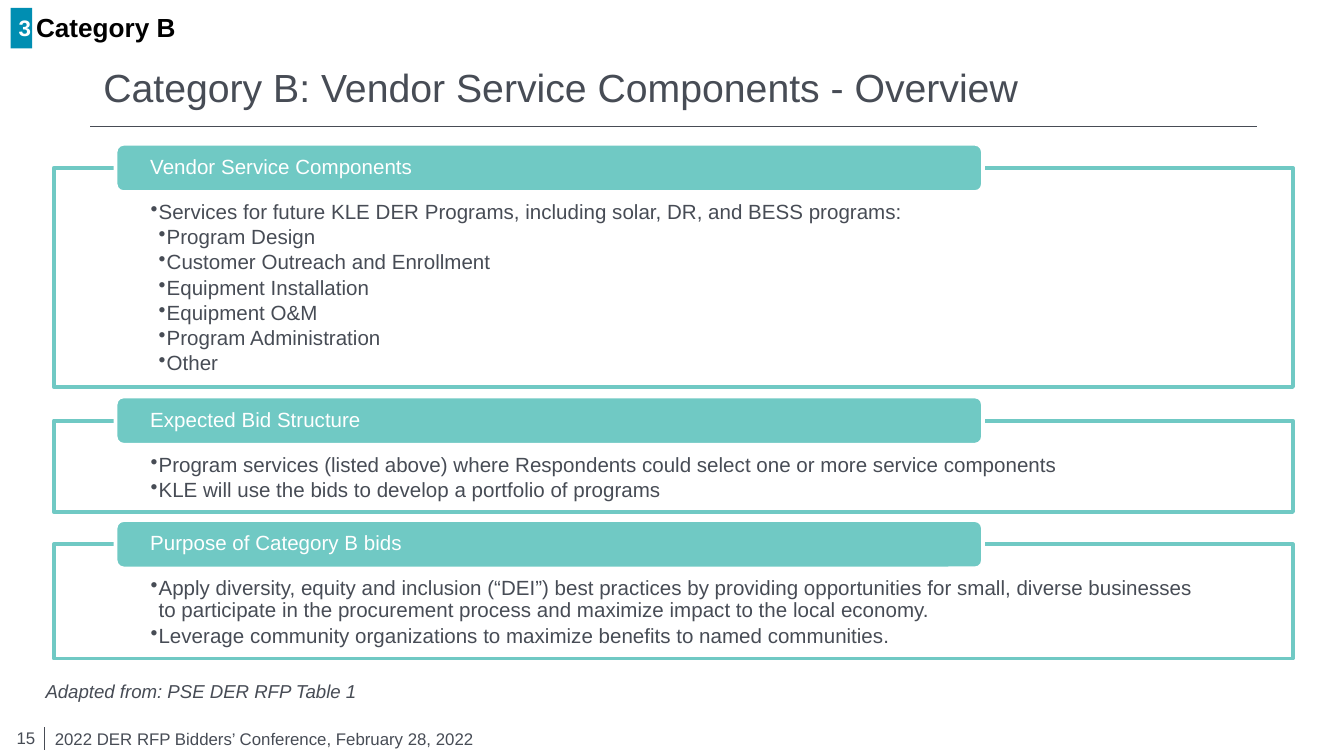
from lxml import etree
from pptx import Presentation
from pptx.dml.color import RGBColor
from pptx.enum.shapes import MSO_CONNECTOR, MSO_SHAPE
from pptx.enum.text import MSO_ANCHOR, PP_ALIGN
from pptx.oxml.ns import qn
from pptx.util import Inches, Pt

LINE = MSO_CONNECTOR.STRAIGHT
RECT = MSO_SHAPE.RECTANGLE
ROUND = MSO_SHAPE.ROUNDED_RECTANGLE
TOP, MIDDLE = MSO_ANCHOR.TOP, MSO_ANCHOR.MIDDLE
LEFT, CENTER, RIGHT = PP_ALIGN.LEFT, PP_ALIGN.CENTER, PP_ALIGN.RIGHT

GREY = RGBColor(0x47, 0x4C, 0x55)
TEAL = RGBColor(0x70, 0xC9, 0xC4)
BLUE = RGBColor(0x00, 0x8E, 0xB2)
WHITE = RGBColor(0xFF, 0xFF, 0xFF)
BLACK = RGBColor(0x00, 0x00, 0x00)

INDENT = 0.06
PANELS = [
    (1.25, 1.63, "Vendor Service Components", [
        (1, "Services for future KLE DER Programs, including solar, DR, and BESS programs:"),
        (2, "Program Design"),
        (2, "Customer Outreach and Enrollment"),
        (2, "Equipment Installation"),
        (2, "Equipment O&M"),
        (2, "Program Administration"),
        (2, "Other"),
    ]),
    (3.13, 0.68, "Expected Bid Structure", [
        (1, "Program services (listed above) where Respondents could select one or more service components"),
        (1, "KLE will use the bids to develop a portfolio of programs"),
    ]),
    (4.05, 0.85, "Purpose of Category B bids", [
        (1, "Apply diversity, equity and inclusion (“DEI”) best practices by providing opportunities "
            "for small, diverse businesses to participate in the procurement process and maximize "
            "impact to the local economy."),
        (1, "Leverage community organizations to maximize benefits to named communities."),
    ]),
]


def style(para, size, color, align=LEFT, bold=False, italic=False):
    para.alignment = align
    for font in [para.font] + [run.font for run in para.runs]:
        font.name = "Arial"
        font.size = Pt(size)
        font.color.rgb = color
        font.bold = bold
        font.italic = italic


def set_frame(shape, anchor, left=0.1, top=0.05, right=0.1, bottom=0.05):
    frame = shape.text_frame
    frame.word_wrap = True
    frame.vertical_anchor = anchor
    frame.margin_left, frame.margin_top = Inches(left), Inches(top)
    frame.margin_right, frame.margin_bottom = Inches(right), Inches(bottom)
    return frame


def add_label(slide, box, text, size, color, anchor=MIDDLE, **look):
    shape = slide.shapes.add_textbox(*map(Inches, box))
    frame = set_frame(shape, anchor)
    frame.text = text
    style(frame.paragraphs[0], size, color, **look)


def add_block(slide, kind, box, fill, edge=None):
    shape = slide.shapes.add_shape(kind, *map(Inches, box))
    shape.shadow.inherit = False
    shape.fill.solid()
    shape.fill.fore_color.rgb = fill
    if edge is None:
        shape.line.fill.background()
    else:
        shape.line.color.rgb = edge
        shape.line.width = Pt(2)
    return shape


def add_rule(slide, *ends):
    rule = slide.shapes.add_connector(LINE, *map(Inches, ends))
    rule.line.color.rgb = GREY
    rule.line.width = Pt(0.75)
    etree.SubElement(rule._element.spPr, qn("a:effectLst"))


def add_bullet(para, level):
    props = para._p.get_or_add_pPr()
    props.set("marL", str(Inches(INDENT * level)))
    props.set("indent", str(-Inches(INDENT)))
    etree.SubElement(props, qn("a:buChar"), char="•")
    para.level = level
    para.line_spacing = 0.9
    para.space_after = Pt(1.65)


def add_panel(slide, left, top, width, height, head, items):
    body = add_block(slide, RECT, (left, top, width, height), WHITE, TEAL)
    alpha = etree.SubElement(body._element.spPr.find(".//" + qn("a:srgbClr")), qn("a:alpha"))
    alpha.set("val", "90000")
    frame = set_frame(body, TOP, 0.72, 0.25, 0.72, 0.09)
    for row, (level, text) in enumerate(items):
        para = frame.add_paragraph() if row else frame.paragraphs[0]
        para.text = text
        add_bullet(para, level)
        style(para, 11, GREY)

    tab = add_block(slide, ROUND, (left + 0.46, top - 0.18, width * 0.7, 0.36), TEAL, WHITE)
    frame = set_frame(tab, MIDDLE, 0.24, 0, 0.24, 0)
    frame.text = head
    frame.paragraphs[0].line_spacing = 0.9
    style(frame.paragraphs[0], 11, WHITE)


def add_marker(slide, left, top):
    badge = add_block(slide, RECT, (left, top, 0.16, 0.3), BLUE)
    frame = set_frame(badge, TOP, left=0.05, right=0)
    frame.word_wrap = False
    frame.text = "3"
    style(frame.paragraphs[0], 12, WHITE, CENTER, bold=True)
    add_label(slide, (left + 0.09, top + 0.02, 2.67, 0.24), "Category B", 14, BLACK, bold=True)


def add_title(slide, left, top, width, height):
    add_label(slide, (left, top, width, height),
              "Category B: Vendor Service Components - Overview", 21, GREY)
    add_rule(slide, left, top + height, left + width, top + height)


def add_footer(slide, left, top):
    add_label(slide, (left, top, 0.42, 0.34), "15", 9, GREY, align=RIGHT)
    add_rule(slide, left + 0.39, top + 0.09, left + 0.39, top + 0.26)
    add_label(slide, (left + 0.37, top + 0.05, 4.84, 0.25),
              "2022 DER RFP Bidders’ Conference, February 28, 2022", 9, GREY, TOP)


def main():
    deck = Presentation()
    deck.slide_width = Inches(10)
    deck.slide_height = deck.slide_width * 9 // 16
    slide = deck.slides.add_slide(deck.slide_layouts[6])
    add_footer(slide, -0.06, 5.32)
    add_title(slide, 0.67, 0.35, 8.68, 0.59)
    add_marker(slide, 0.08, 0.06)
    for top, height, head, items in PANELS:
        add_panel(slide, 0.4, top, 9.22, height, head, items)
    add_label(slide, (0.24, 5.01, 3.72, 0.27), "Adapted from: PSE DER RFP Table 1",
              10, GREY, TOP, italic=True)
    deck.save("out.pptx")


if __name__ == "__main__":
    main()
